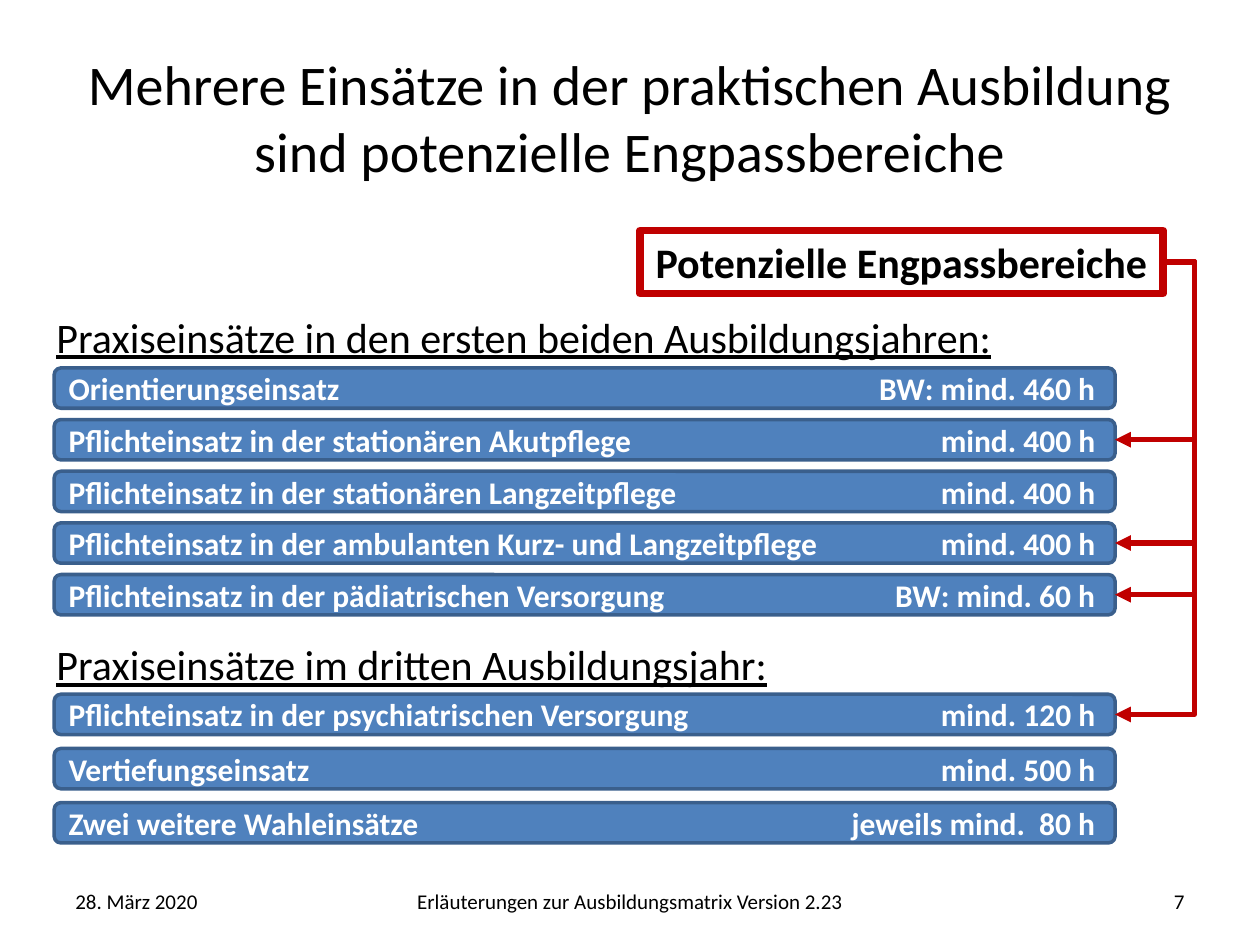
from pptx import Presentation
from pptx.dml.color import RGBColor
from pptx.enum.shapes import MSO_CONNECTOR, MSO_SHAPE
from pptx.enum.text import MSO_ANCHOR, PP_ALIGN
from pptx.oxml.ns import qn
from pptx.util import Inches, Pt
from lxml.etree import SubElement

HUES = {"text": "000000", "white": "FFFFFF", "bar": "4F81BD",
        "edge": "3A5F8C", "alert": "C00000"}
FONT = "Calibri"

# Bar geometry in inches
LEFT, WIDE, HIGH = 0.43, 8.42, 0.32
TAB = 8.15
BEND = 0.25  # how far the arrows run to the right of the label

# Each group: heading, its top, top of first bar, step, rows
# Each row: name, hours, whether it is a bottleneck
GROUPS = [
    ("Praxiseinsätze in den ersten beiden Ausbildungsjahren:", 2.42, 2.92, 0.41, [
        ("Orientierungseinsatz", "BW: mind. 460 h", False),
        ("Pflichteinsatz in der stationären Akutpflege", "mind. 400 h", True),
        ("Pflichteinsatz in der stationären Langzeitpflege", "mind. 400 h", False),
        ("Pflichteinsatz in der ambulanten Kurz- und Langzeitpflege", "mind. 400 h", True),
        ("Pflichteinsatz in der pädiatrischen Versorgung", "BW: mind. 60 h", True),
    ]),
    ("Praxiseinsätze im dritten Ausbildungsjahr:", 5.02, 5.51, 0.43, [
        ("Pflichteinsatz in der psychiatrischen Versorgung", "mind. 120 h", True),
        ("Vertiefungseinsatz", "mind. 500 h", False),
        ("Zwei weitere Wahleinsätze", "jeweils mind.  80 h", False),
    ]),
]

# Footer: text, left, width, alignment
FOOTER = [
    ("28. März 2020", 0.5, 2.33, PP_ALIGN.LEFT),
    ("Erläuterungen zur Ausbildungsmatrix Version 2.23", 2.56, 4.88, PP_ALIGN.CENTER),
    ("7", 7.17, 2.33, PP_ALIGN.RIGHT),
]


def color(name):
    return RGBColor.from_string(HUES[name])


def write(shape, text, size=24, hue="text", bold=False, line=False,
          align=PP_ALIGN.LEFT, anchor=MSO_ANCHOR.MIDDLE, wrap=True):
    frame = shape.text_frame
    frame.word_wrap = wrap
    frame.vertical_anchor = anchor
    para = frame.paragraphs[0]
    para.alignment = align
    run = para.add_run()
    run.text = text
    font = run.font
    font.name, font.size, font.bold = FONT, Pt(size), bold
    font.underline = line
    font.color.rgb = color(hue)
    return para


def label(slide, text, left, top, width, height, **style):
    box = slide.shapes.add_textbox(
        Inches(left), Inches(top), Inches(width), Inches(height))
    write(box, text, **style)


def block(slide, kind, left, top, width, height, edge, weight, fill=None):
    shape = slide.shapes.add_shape(
        kind, Inches(left), Inches(top), Inches(width), Inches(height))
    shape.shadow.inherit = False
    if fill:
        shape.fill.solid()
        shape.fill.fore_color.rgb = color(fill)
    else:
        shape.fill.background()
    shape.line.color.rgb = color(edge)
    shape.line.width = Pt(weight)
    return shape


def bar(slide, name, hours, top):
    shape = block(slide, MSO_SHAPE.ROUNDED_RECTANGLE, LEFT, top, WIDE, HIGH,
                  "edge", 2, fill="bar")
    para = write(shape, f"{name}\t{hours}", size=18, hue="white", bold=True)
    tabs = SubElement(para._p.get_or_add_pPr(), qn("a:tabLst"))
    SubElement(tabs, qn("a:tab"), pos=str(Inches(TAB)), algn="r")
    return shape


def arrow(slide, start, end):
    link = slide.shapes.add_connector(MSO_CONNECTOR.ELBOW, 0, 0, 0, 0)
    link.begin_connect(start, 3)
    link.end_connect(end, 3)
    link.line.color.rgb = color("alert")
    link.line.width = Pt(3)
    SubElement(link.line._get_or_add_ln(), qn("a:tailEnd"), type="triangle")
    props = link._element.spPr
    SubElement(props, qn("a:effectLst"))
    # Bend outside the span, on the right of the label
    guides = props.find(qn("a:prstGeom")).get_or_add_avLst()
    ratio = round(-Inches(BEND) / link.width * 100000)
    SubElement(guides, qn("a:gd"), name="adj1", fmla=f"val {ratio}")


def main():
    deck = Presentation()
    deck.slide_width, deck.slide_height = Inches(10), Inches(7.5)
    slide = deck.slides.add_slide(deck.slide_layouts[6])

    # Title
    label(slide, "Mehrere Einsätze in der praktischen Ausbildung sind "
          "potenzielle Engpassbereiche", 0.5, 0.3, 9, 1.25,
          size=32, align=PP_ALIGN.CENTER)

    # Headings and bars
    risks = []
    for head, high, first, step, rows in GROUPS:
        label(slide, head, 0.35, high, 9, 0.5, line=True, anchor=MSO_ANCHOR.TOP)
        for i, (name, hours, risk) in enumerate(rows):
            shape = bar(slide, name, hours, first + i * step)
            if risk:
                risks.append(shape)

    # Bottleneck label and its arrows
    alert = block(slide, MSO_SHAPE.RECTANGLE, 5.08, 1.83, 4.15, 0.5, "alert", 4.5)
    write(alert, "Potenzielle Engpassbereiche", bold=True,
          align=PP_ALIGN.CENTER, wrap=False)
    for shape in risks:
        arrow(slide, alert, shape)

    # Footer
    for text, left, width, align in FOOTER:
        label(slide, text, left, 6.95, width, 0.4, size=12, align=align)

    deck.save("out.pptx")


if __name__ == "__main__":
    main()
